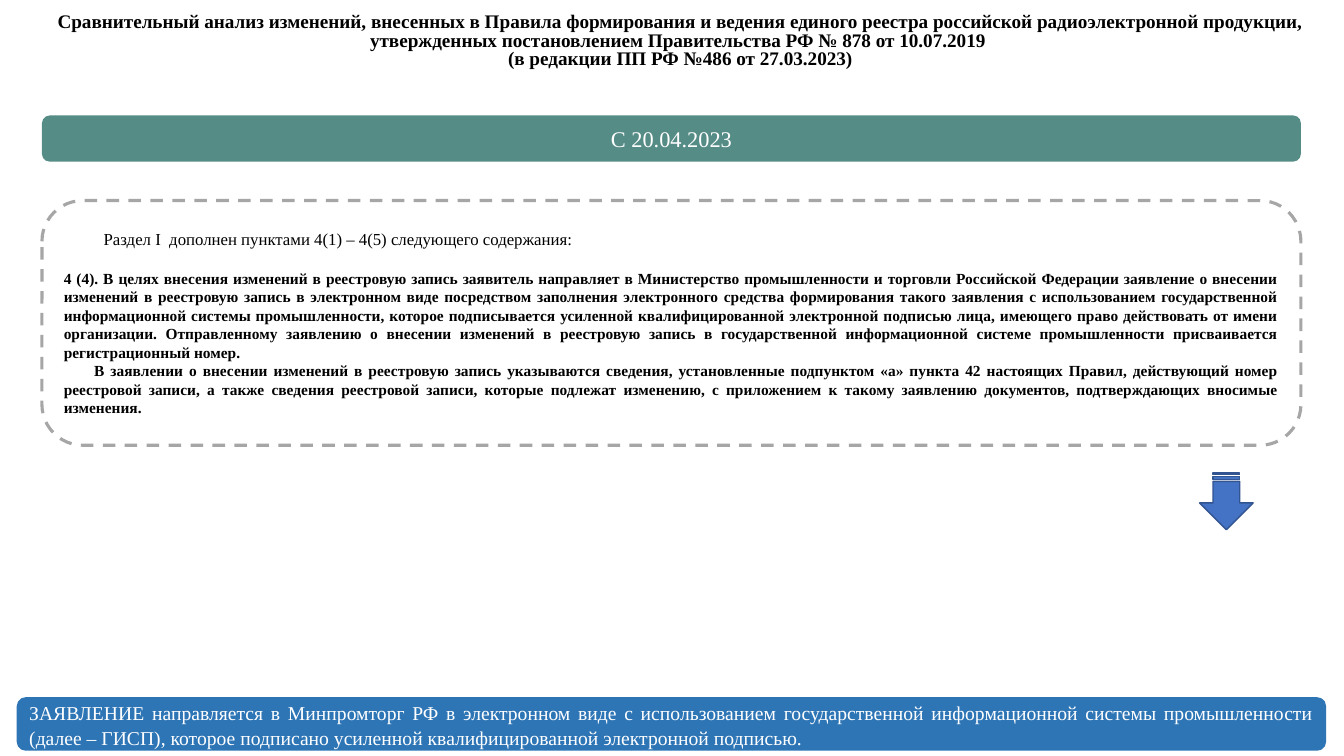
from pptx import Presentation
from pptx.dml.color import RGBColor
from pptx.enum.dml import MSO_LINE
from pptx.enum.shapes import MSO_SHAPE as SHAPE
from pptx.enum.text import MSO_ANCHOR as ANCHOR, MSO_AUTO_SIZE, PP_ALIGN as ALIGN
from pptx.util import Pt

PX = 9525  # EMU per pixel, slide is 1280 x 720


def add_block(kind, box, fill=None, line=None, width=1):
    sp = s.shapes.add_shape(kind, *(v * PX for v in box))
    sp.shadow.inherit = False
    for fmt, color in ((sp.fill, fill), (sp.line.fill, line)):
        if color:
            fmt.solid()
            fmt.fore_color.rgb = RGBColor.from_string(color)
        else:
            fmt.background()
    if line:
        sp.line.width = Pt(width)
    return sp


def write(sp, paragraphs, color, anchor=ANCHOR.MIDDLE):
    """Fill sp with (text, size, bold, first-line indent in px, paragraph format) items."""
    tf = sp.text_frame
    tf.word_wrap = True
    tf.auto_size = MSO_AUTO_SIZE.NONE
    tf.vertical_anchor = anchor
    for i, (text, size, bold, indent, layout) in enumerate(paragraphs):
        p = tf.add_paragraph() if i else tf.paragraphs[0]
        for name, value in layout.items():
            setattr(p, name, value)
        if indent:
            p._p.get_or_add_pPr().set("indent", str(indent * PX))
        r = p.add_run()
        r.text = text
        for name, value in {"name": "Times New Roman", "size": Pt(size), "bold": bold}.items():
            setattr(r.font, name, value)
        r.font.color.rgb = RGBColor.from_string(color)


prs = Presentation()
prs.slide_width, prs.slide_height = 1280 * PX, 720 * PX
s = prs.slides.add_slide(prs.slide_layouts[5])

# Title
title = s.shapes.title
for name, value in zip(("left", "top", "width", "height"), (40, 5, 1216, 66)):
    setattr(title, name, value * PX)
heading = {"alignment": ALIGN.CENTER, "line_spacing": 0.8}
write(title, [
    ("Сравнительный анализ изменений, внесенных в Правила формирования и ведения единого реестра "
     "российской радиоэлектронной продукции, утвержденных постановлением Правительства РФ "
     "№ 878 от 10.07.2019 ", 13.7, True, 0, heading),
    ("(в редакции ПП РФ №486 от 27.03.2023)", 13.7, True, 0, heading),
], "000000", ANCHOR.BOTTOM)

# Date bar
date_bar = add_block(SHAPE.ROUNDED_RECTANGLE, (40, 110, 1199, 44), "568C86")
write(date_bar, [("С 20.04.2023", 16, False, 0, {"alignment": ALIGN.CENTER})], "FFFFFF")

# Text of the amendment
amendment = add_block(SHAPE.ROUNDED_RECTANGLE, (40, 191, 1199, 233), line="A6A6A6", width=2.25)
amendment.line.dash_style = MSO_LINE.DASH
justified = {"alignment": ALIGN.JUSTIFY}
write(amendment, [
    ("Раздел I  дополнен пунктами 4(1) – 4(5) следующего содержания:", 12, False, 38,
     {"alignment": ALIGN.JUSTIFY, "space_after": Pt(14)}),
    ("4 (4). В целях внесения изменений в реестровую запись заявитель направляет в Министерство "
     "промышленности и торговли Российской Федерации заявление о внесении изменений в реестровую "
     "запись в электронном виде посредством заполнения электронного средства формирования такого "
     "заявления с использованием государственной информационной системы промышленности, которое "
     "подписывается усиленной квалифицированной электронной подписью лица, имеющего право "
     "действовать от имени организации. Отправленному заявлению о внесении изменений в реестровую "
     "запись в государственной информационной системе промышленности присваивается "
     "регистрационный номер.", 11, True, 0, justified),
    ("В заявлении о внесении изменений в реестровую запись указываются сведения, установленные "
     "подпунктом «а» пункта 42 настоящих Правил, действующий номер реестровой записи, а также "
     "сведения реестровой записи, которые подлежат изменению, с приложением к такому заявлению "
     "документов, подтверждающих вносимые изменения.", 11, True, 29, justified),
], "000000")

# Arrow down to the conclusion
arrow = add_block(SHAPE.STRIPED_RIGHT_ARROW, (1141, 452, 54, 51), "4472C4", "325491")
arrow.rotation = 90

# Conclusion
conclusion = add_block(SHAPE.ROUNDED_RECTANGLE, (16, 664, 1247, 51), "2E75B6")
write(conclusion, [
    ("ЗАЯВЛЕНИЕ направляется в Минпромторг РФ в электронном виде с использованием "
     "государственной информационной системы промышленности (далее – ГИСП), которое подписано "
     "усиленной квалифицированной электронной подписью.", 14, False, 0,
     {"alignment": ALIGN.JUSTIFY, "line_spacing": 1.07}),
], "FFFFFF")

prs.save("out.pptx")
